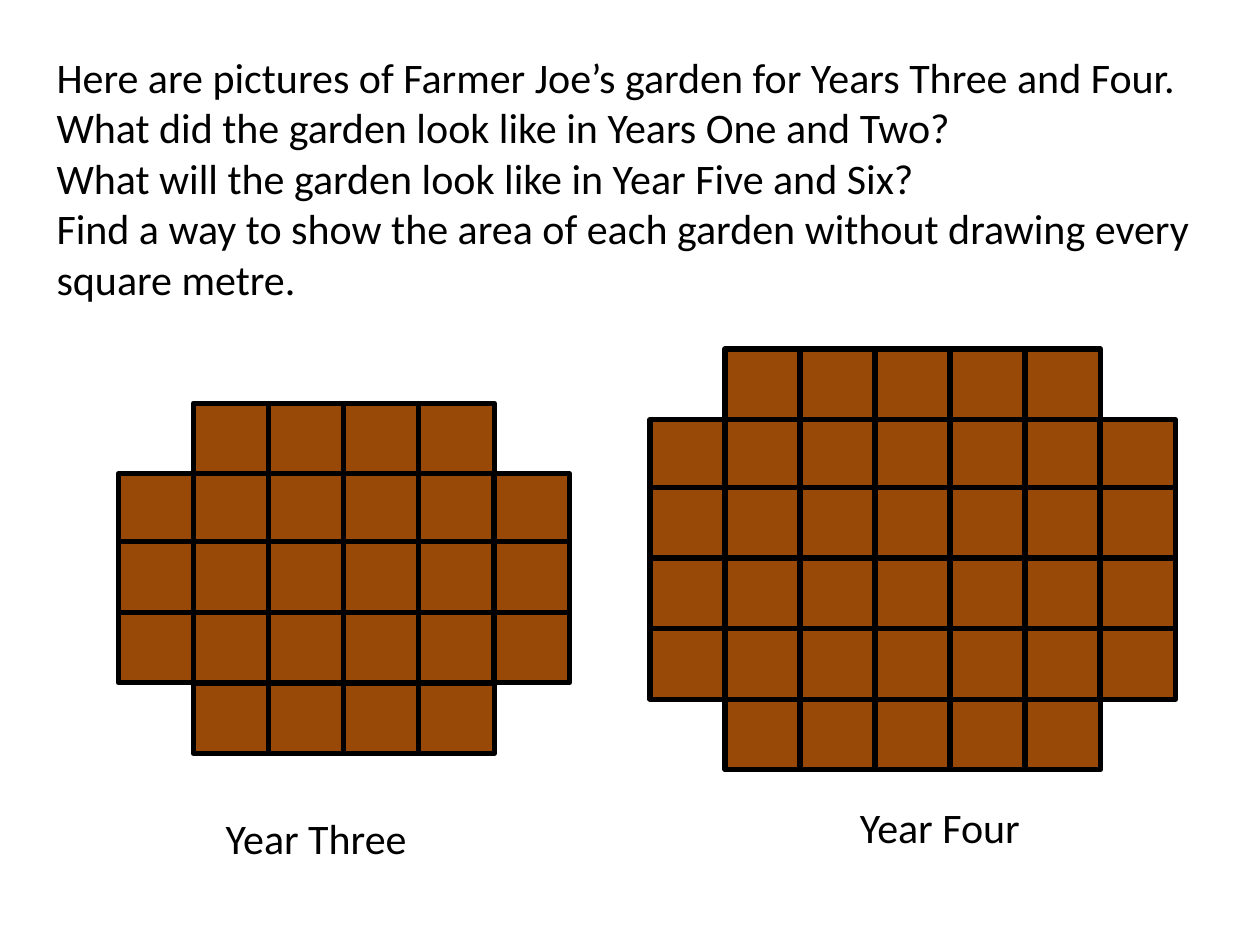
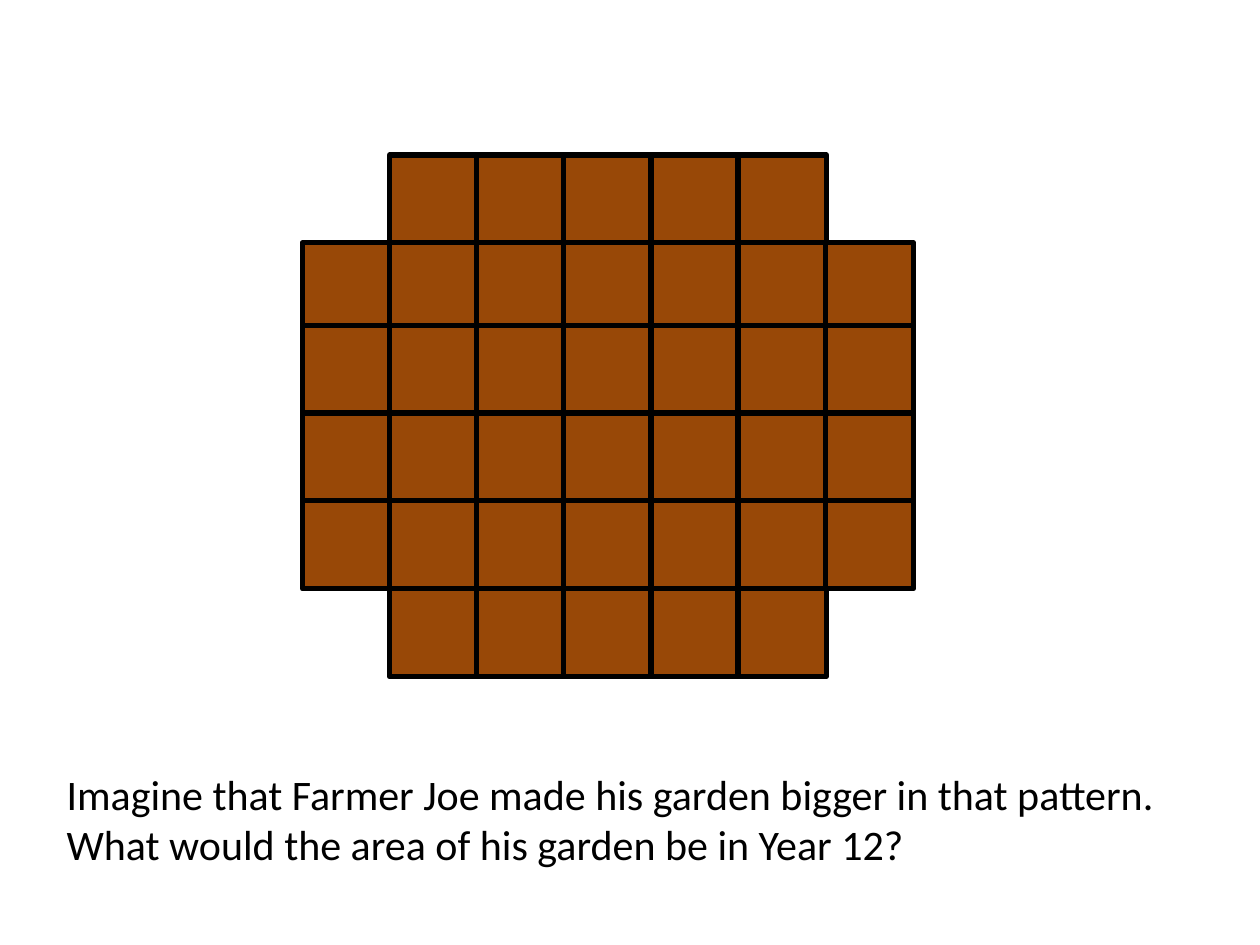
"""Build two slides about the growing pattern of Farmer Joe's garden."""
import pptx
import pptx.dml.color
import pptx.enum.shapes
import pptx.enum.text
import pptx.util

PX = 9144
SLIDE_SIZE = (1000, 750)
FONT, FONT_SIZE = "Calibri", pptx.util.Pt(24)
SOIL = pptx.dml.color.RGBColor(0x98, 0x48, 0x07)
BLACK = pptx.dml.color.RGBColor(0, 0, 0)
LEFT = pptx.enum.text.PP_ALIGN.LEFT
CENTER = pptx.enum.text.PP_ALIGN.CENTER

SLIDES = [
    {
        "texts": [
            ((113, 640, 276, 50), CENTER, ["Year Three"]),
            ((608, 631, 276, 50), CENTER, ["Year Four"]),
            ((35, 36, 921, 212), LEFT, [
                "Here are pictures of Farmer Joe’s garden for Years Three and Four.",
                "What did the garden look like in Years One and Two?",
                "What will the garden look like in Year Five and Six?",
                "Find a way to show the area of each garden without drawing every square metre.",
            ]),
        ],
        "gardens": [
            {"year": 4, "box": (516, 277, 417, 334), "cell": (60, 56), "overlap": 2},
            {"year": 3, "box": (94, 320, 358, 278), "cell": (60, 56), "overlap": 2},
        ],
    },
    {
        "texts": [
            ((43, 605, 929, 91), LEFT, [
                "Imagine that Farmer Joe made his garden bigger in that pattern.",
                "What would the area of his garden be in Year 12?",
            ]),
        ],
        "gardens": [
            {"year": 4, "box": (240, 123, 485, 414), "cell": (70, 70), "overlap": 4},
        ],
    },
]


def emu(*lengths):
    return [pptx.util.Emu(round(length * PX)) for length in lengths]


def add_text(slide, box, align, lines):
    tf = slide.shapes.add_textbox(*emu(*box)).text_frame
    tf.word_wrap = True
    tf.auto_size = pptx.enum.text.MSO_AUTO_SIZE.SHAPE_TO_FIT_TEXT
    tf.text = "\n".join(lines)
    for p in tf.paragraphs:
        p.alignment = align
        p.font.name = FONT
        p.font.size = FONT_SIZE
        p.font.color.rgb = BLACK


def add_garden(slide, year, box, cell, overlap):
    x, y, w, h = box
    cell_w, cell_h = cell
    cols, rows = year + 3, year + 2
    step_x = (w - cell_w) / (cols - 1)
    step_y = (h + overlap - cell_h) / (rows - 1)
    group = slide.shapes.add_group_shape()
    for row in range(rows):
        top = y + row * step_y - (overlap if row >= 2 else 0)
        inset = 1 if row in (0, rows - 1) else 0
        for col in range(inset, cols - inset):
            sp = group.shapes.add_shape(
                pptx.enum.shapes.MSO_SHAPE.RECTANGLE,
                *emu(x + col * step_x, top, cell_w, cell_h))
            sp.shadow.inherit = False
            sp.fill.solid()
            sp.fill.fore_color.rgb = SOIL
            sp.line.color.rgb = BLACK
            sp.line.width = pptx.util.Pt(3)


def main():
    prs = pptx.Presentation()
    prs.slide_width, prs.slide_height = emu(*SLIDE_SIZE)
    blank = prs.slide_layouts.get_by_name("Blank")
    for content in SLIDES:
        slide = prs.slides.add_slide(blank)
        for text in content["texts"]:
            add_text(slide, *text)
        for garden in content["gardens"]:
            add_garden(slide, **garden)
    prs.save("out.pptx")


if __name__ == "__main__":
    main()
